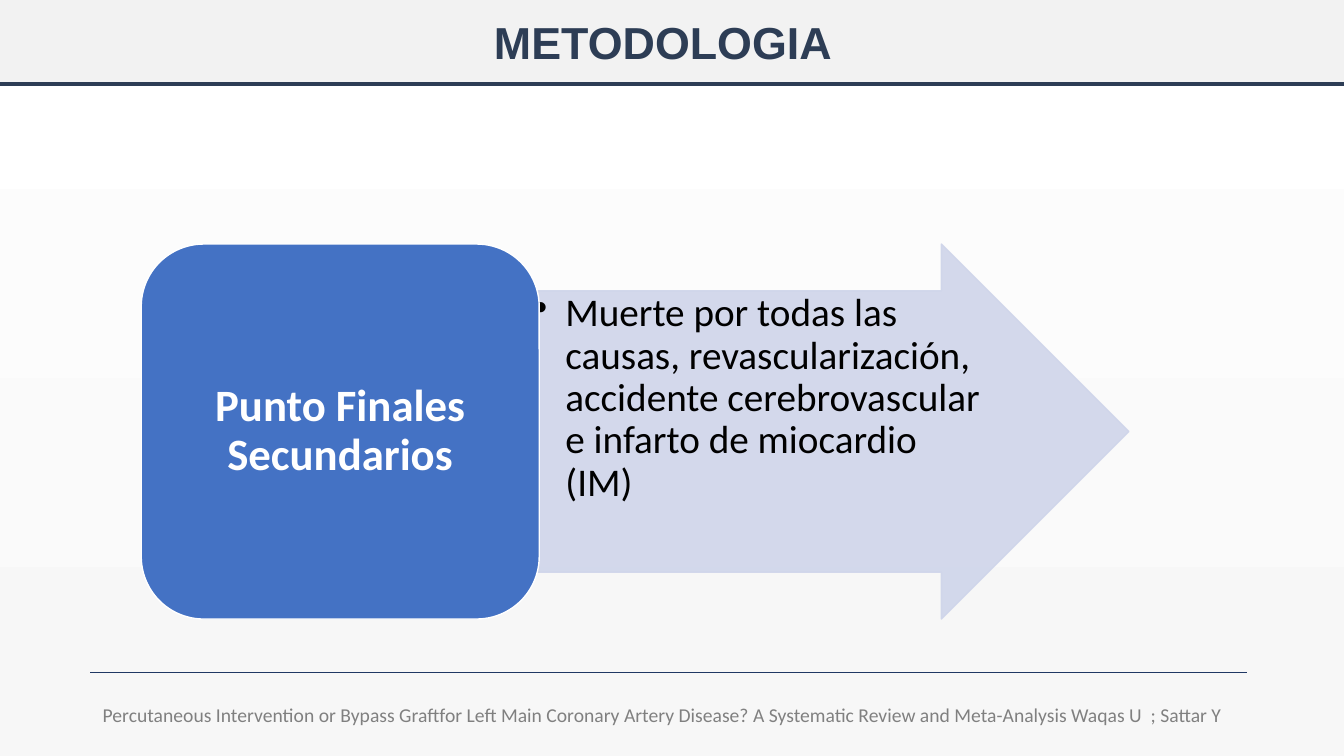
"""Builds the METODOLOGIA slide: secondary endpoints block pointing to its arrow of outcomes."""
import lxml.etree
import pptx
import pptx.dml.color
import pptx.enum.shapes
import pptx.enum.text
import pptx.oxml.ns
import pptx.util

Cm = pptx.util.Cm
Pt = pptx.util.Pt
RGBColor = pptx.dml.color.RGBColor
Shape = pptx.enum.shapes.MSO_SHAPE
Anchor = pptx.enum.text.MSO_ANCHOR
Align = pptx.enum.text.PP_ALIGN
qn = pptx.oxml.ns.qn

WHITE = RGBColor(0xFF, 0xFF, 0xFF)
BLACK = RGBColor(0, 0, 0)
PALE_GREY = RGBColor(0xF7, 0xF7, 0xF7)
BAND_GREY = RGBColor(0xF2, 0xF2, 0xF2)
TEXT_GREY = RGBColor(0x80, 0x80, 0x80)
NAVY = RGBColor(0x2D, 0x3D, 0x55)
RULE_BLUE = RGBColor(0x20, 0x38, 0x64)
BLOCK_BLUE = RGBColor(0x44, 0x72, 0xC4)
ARROW_BLUE = RGBColor(0xCF, 0xD5, 0xEA)


def add_panel(page, kind, bounds, fill, outline=None):
    panel = page.shapes.add_shape(kind, *[Cm(length) for length in bounds])
    panel.shadow.inherit = False
    panel.fill.solid()
    panel.fill.fore_color.rgb = fill
    if outline is None:
        panel.line.fill.background()
    else:
        panel.line.color.rgb = outline
        panel.line.width = Pt(1)
    return panel


def write_text(box, text, color, frame_format, para_format, font_format):
    frame = box.text_frame
    para = frame.paragraphs[0]
    span = para.add_run()
    span.text = text
    span.font.color.rgb = color
    frame_format = {"word_wrap": True, **frame_format}
    para_format = {"line_spacing": 0.9, **para_format}
    for target, values in ((frame, frame_format), (para, para_format), (span.font, font_format)):
        for name, value in values.items():
            setattr(target, name, value)
    return para


deck = pptx.Presentation()
deck.slide_width = Cm(33.87)
deck.slide_height = Cm(19.05)
page = deck.slides.add_slide(deck.slide_layouts[6])

backdrop = page.background.fill
backdrop.gradient()
backdrop.gradient_angle = 270
for stop, color in zip(backdrop.gradient_stops, (WHITE, PALE_GREY)):
    stop.color.rgb = color

add_panel(page, Shape.RECTANGLE, (0, 0, 33.87, 2.11), BAND_GREY)
for left, right, height, color, width in (
    (0, 33.87, 2.11, NAVY, 3),
    (2.27, 31.43, 16.94, RULE_BLUE, 0.5),
):
    rule = page.shapes.add_connector(
        pptx.enum.shapes.MSO_CONNECTOR.STRAIGHT, Cm(left), Cm(height), Cm(right), Cm(height)
    )
    rule.line.color.rgb = color
    rule.line.width = Pt(width)
    lxml.etree.SubElement(rule._element.spPr, qn("a:effectLst"))

title = page.shapes.add_textbox(Cm(2.24), Cm(-0.2), Cm(29.21), Cm(2.69))
write_text(
    title, "METODOLOGIA ", NAVY,
    {"vertical_anchor": Anchor.MIDDLE},
    {"alignment": Align.CENTER},
    {"name": "Arial", "size": Pt(32), "bold": True},
)

citation = page.shapes.add_textbox(Cm(2.34), Cm(17.65), Cm(29.21), Cm(1.4))
write_text(
    citation,
    "Percutaneous Intervention or Bypass Graftfor Left Main Coronary Artery Disease? "
    "A Systematic Review and Meta-Analysis Waqas U  ; Sattar Y",
    TEXT_GREY, {}, {}, {"name": "Calibri", "size": Pt(14)},
)

arrow = add_panel(page, Shape.RIGHT_ARROW, (13.41, 6.15, 15.04, 9.45), ARROW_BLUE, ARROW_BLUE)
arrow.adjustments[0] = 0.75
arrow.adjustments[1] = 0.5
for color in arrow._element.spPr.iter(qn("a:srgbClr")):
    lxml.etree.SubElement(color, qn("a:alpha"), val="90000")
outcomes = write_text(
    arrow,
    "Muerte por todas las causas, revascularización, accidente cerebrovascular "
    "e infarto de miocardio (IM)",
    BLACK,
    {"vertical_anchor": Anchor.TOP,
     **{f"margin_{side}": Cm(0.05) for side in ("left", "top", "right", "bottom")}},
    {"alignment": Align.LEFT},
    {"name": "Calibri", "size": Pt(28)},
)
bullet_format = outcomes._p.get_or_add_pPr()
bullet_format.set("marL", str(Cm(0.79)))
bullet_format.set("indent", str(-Cm(0.79)))
lxml.etree.SubElement(bullet_format, qn("a:buChar"), char="•")

block = add_panel(page, Shape.ROUNDED_RECTANGLE, (3.56, 6.15, 10.03, 9.45), BLOCK_BLUE, WHITE)
write_text(
    block, "Punto Finales Secundarios", WHITE,
    {"vertical_anchor": Anchor.MIDDLE, "margin_left": Cm(0.33), "margin_right": Cm(0.33),
     "margin_top": Cm(0.17), "margin_bottom": Cm(0.17)},
    {"alignment": Align.CENTER},
    {"name": "Calibri", "size": Pt(32), "bold": True},
)

deck.save("out.pptx")
